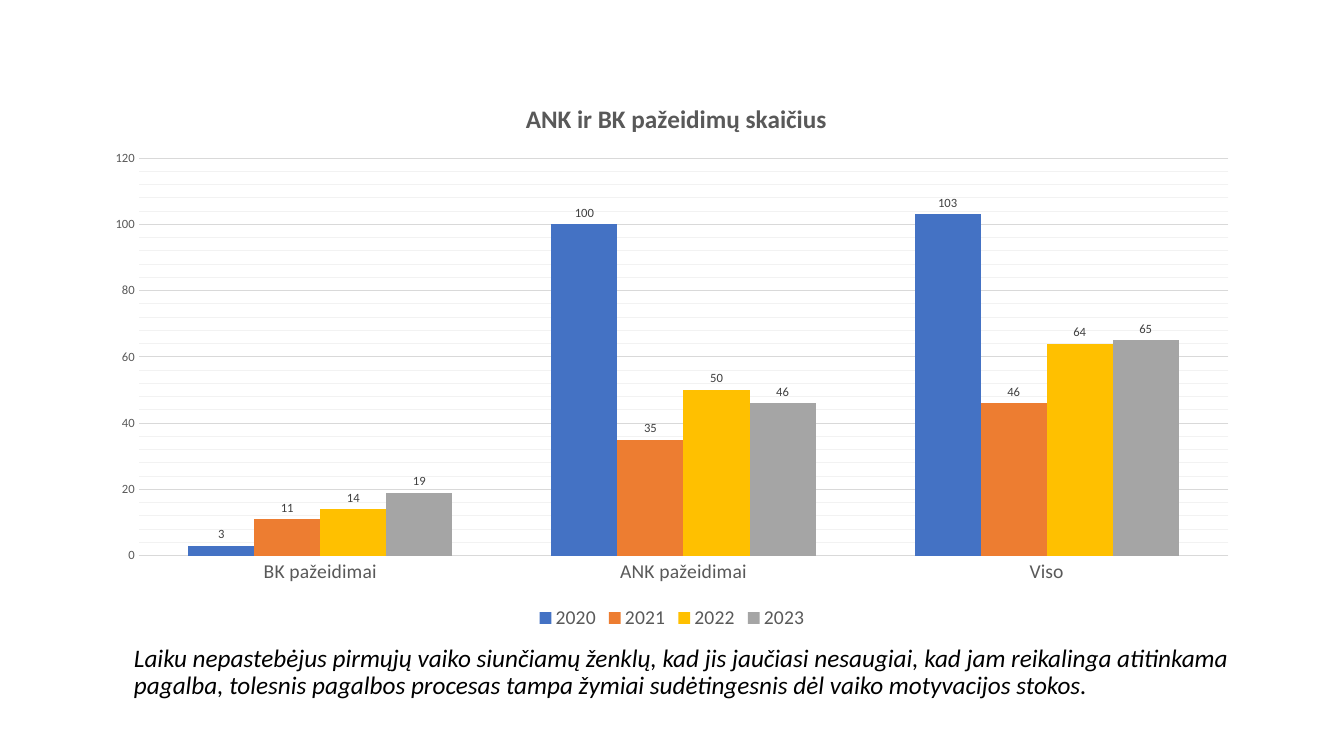
from dataclasses import dataclass

from pptx import Presentation
from pptx import oxml
from pptx.chart.data import CategoryChartData
from pptx.dml.color import RGBColor
from pptx.enum import chart as ch, text
from pptx.util import Pt

FONT = "Calibri"
BLACK = RGBColor(0x00, 0x00, 0x00)
DARK = RGBColor(0x40, 0x40, 0x40)
GREY = RGBColor(0x59, 0x59, 0x59)
GRID = RGBColor(0xD9, 0xD9, 0xD9)
MINOR_GRID = RGBColor(0xF2, 0xF2, 0xF2)
C_NS = "http://schemas.openxmlformats.org/drawingml/2006/chart"


@dataclass(frozen=True)
class YearSeries:
    year: str
    values: tuple[int, ...]
    color: RGBColor


CATEGORIES = ("BK pažeidimai", "ANK pažeidimai", "Viso")
YEARS = (
    YearSeries("2020", (3, 100, 103), RGBColor(0x44, 0x72, 0xC4)),
    YearSeries("2021", (11, 35, 46), RGBColor(0xED, 0x7D, 0x31)),
    YearSeries("2022", (14, 50, 64), RGBColor(0xFF, 0xC0, 0x00)),
    YearSeries("2023", (19, 46, 65), RGBColor(0xA5, 0xA5, 0xA5)),
)
CHART_TITLE = "ANK ir BK pažeidimų skaičius"
CONCLUSION = (
    "Laiku nepastebėjus pirmųjų vaiko siunčiamų ženklų, kad jis jaučiasi nesaugiai, "
    "kad jam reikalinga atitinkama pagalba, tolesnis pagalbos procesas tampa žymiai "
    "sudėtingesnis dėl vaiko motyvacijos stokos."
)


def style_font(font, size: float, color: RGBColor, bold: bool = False, italic: bool = False) -> None:
    font.name, font.size = FONT, Pt(size)
    font.bold, font.italic = bold, italic
    font.color.rgb = color


def style_line(line, color: RGBColor) -> None:
    line.color.rgb = color
    line.width = Pt(0.75)


def set_layout(parent, index: int, inner: bool, **fractions: float) -> None:
    """Place a chart element by fractions of the chart area."""
    for old in parent.findall(f"{{{C_NS}}}layout"):
        parent.remove(old)
    target = '<c:layoutTarget val="inner"/>' if inner else ""
    modes = "".join(f'<c:{k}Mode val="edge"/>' for k in "xy")
    sizes = "".join(f'<c:{k} val="{v}"/>' for k, v in fractions.items())
    parent.insert(index, oxml.parse_xml(
        f'<c:layout xmlns:c="{C_NS}"><c:manualLayout>{target}{modes}{sizes}'
        "</c:manualLayout></c:layout>"))


def add_violations_chart(s) -> None:
    data = CategoryChartData()
    data.categories = CATEGORIES
    for item in YEARS:
        data.add_series(item.year, item.values)
    chart = s.shapes.add_chart(ch.XL_CHART_TYPE.COLUMN_CLUSTERED,
                               Pt(66), Pt(53), Pt(828), Pt(400), data).chart
    style_font(chart.font, 10, BLACK)

    # Chart title
    chart.has_title = True
    p = chart.chart_title.text_frame.paragraphs[0]
    r = p.add_run()
    r.text = CHART_TITLE
    style_font(r.font, 18, GREY, bold=True)

    # Legend
    chart.has_legend = True
    chart.legend.position = ch.XL_LEGEND_POSITION.BOTTOM
    chart.legend.include_in_layout = False
    style_font(chart.legend.font, 14, GREY)

    # Axes and gridlines
    for axis, size in ((chart.category_axis, 14), (chart.value_axis, 9)):
        axis.major_tick_mark = axis.minor_tick_mark = ch.XL_TICK_MARK.NONE
        style_font(axis.tick_labels.font, size, GREY)
    style_line(chart.category_axis.format.line, GRID)
    values = chart.value_axis
    values.format.line.fill.background()
    values.minimum_scale, values.maximum_scale = 0, 120
    values.major_unit, values.minor_unit = 20, 4
    values.has_major_gridlines = values.has_minor_gridlines = True
    style_line(values.major_gridlines.format.line, GRID)
    # Minor gridlines have no public formatting object
    root = chart._chartSpace
    minor = root.find(f".//{{{C_NS}}}minorGridlines")
    minor.append(oxml.parse_xml(
        f'<c:spPr xmlns:c="{C_NS}" xmlns:a="http://schemas.openxmlformats.org/drawingml/2006/main">'
        f'<a:ln w="{Pt(0.75)}"><a:solidFill><a:srgbClr val="{MINOR_GRID}"/></a:solidFill></a:ln>'
        "</c:spPr>"))

    # Columns and value labels
    plot = chart.plots[0]
    plot.gap_width, plot.overlap = 150, 0
    plot.vary_by_categories = False
    for item, series in zip(YEARS, plot.series):
        series.format.fill.solid()
        series.format.fill.fore_color.rgb = item.color
        series.invert_if_negative = False
        labels = series.data_labels
        labels.show_value = True
        labels.position = ch.XL_LABEL_POSITION.OUTSIDE_END
        style_font(labels.font, 9, DARK)

    # Placement of title and plot
    set_layout(root.find(f".//{{{C_NS}}}title"), 1, False, x=0.37, y=0.04)
    set_layout(root.find(f".//{{{C_NS}}}plotArea"), 0, True, x=0.04, y=0.15, w=0.94, h=0.71)


def add_conclusion(s) -> None:
    sp = s.shapes.title
    sp.left, sp.top, sp.width, sp.height = Pt(88.5), Pt(438.5), Pt(828), Pt(104.5)
    tf = sp.text_frame
    tf.word_wrap = True
    tf.auto_size = text.MSO_AUTO_SIZE.NONE
    tf.vertical_anchor = text.MSO_ANCHOR.MIDDLE
    tf.margin_bottom = Pt(23.5)
    p = tf.paragraphs[0]
    p.alignment = text.PP_ALIGN.LEFT
    p.line_spacing = 0.9
    r = p.add_run()
    r.text = CONCLUSION
    style_font(r.font, 18, BLACK, italic=True)


def main() -> None:
    prs = Presentation()
    prs.slide_width, prs.slide_height = Pt(960), Pt(540)
    s = prs.slides.add_slide(prs.slide_layouts[5])
    add_conclusion(s)
    add_violations_chart(s)
    prs.save("out.pptx")


if __name__ == "__main__":
    main()
